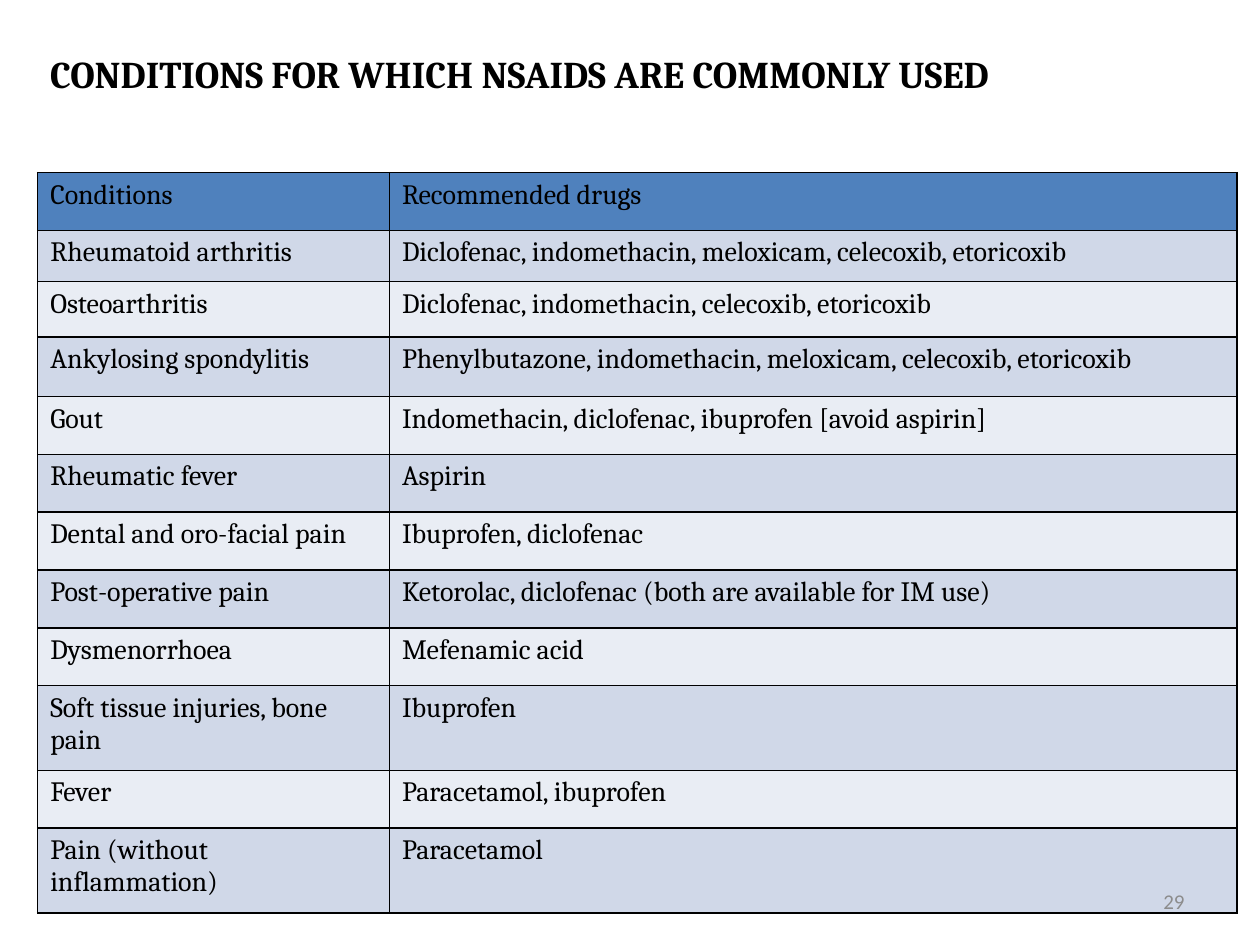
import pptx
import pptx.util
import pptx.dml.color
import pptx.enum.text
import pptx.oxml
import pptx.oxml.ns
from pptx.util import Cm, Pt
from pptx.dml.color import RGBColor

BLACK = RGBColor(0x00, 0x00, 0x00)
GREY = RGBColor(0x8C, 0x8C, 0x8C)
HEADER = RGBColor(0x4F, 0x81, 0xBD)
BANDS = (RGBColor(0xE9, 0xED, 0xF4), RGBColor(0xD0, 0xD8, 0xE8))

# Content
TITLE = "CONDITIONS FOR WHICH NSAIDS ARE COMMONLY USED"
PAGE = "29"
ROWS = [
    ("Conditions", "Recommended drugs"),
    ("Rheumatoid arthritis", "Diclofenac, indomethacin, meloxicam, celecoxib, etoricoxib"),
    ("Osteoarthritis", "Diclofenac, indomethacin, celecoxib, etoricoxib"),
    ("Ankylosing spondylitis", "Phenylbutazone, indomethacin, meloxicam, celecoxib, etoricoxib"),
    ("Gout", "Indomethacin, diclofenac, ibuprofen [avoid aspirin]"),
    ("Rheumatic fever", "Aspirin"),
    ("Dental and oro-facial pain", "Ibuprofen, diclofenac"),
    ("Post-operative pain", "Ketorolac, diclofenac (both are available for IM use)"),
    ("Dysmenorrhoea", "Mefenamic acid"),
    ("Soft tissue injuries, bone pain", "Ibuprofen"),
    ("Fever", "Paracetamol, ibuprofen"),
    ("Pain (without inflammation)", "Paracetamol"),
]
COL_WIDTHS = (7.09, 17.09)
ROW_HEIGHT = 1.165
SPECIAL_HEIGHTS = {1: 1.03, 2: 1.12, 3: 1.2, 9: 1.71, 11: 1.71}


def write(tf, text, size, font, color, bold=False, align=None):
    tf.text = text
    p = tf.paragraphs[0]
    p.alignment = align
    f = p.runs[0].font
    f.size, f.name, f.bold = Pt(size), font, bold
    f.color.rgb = color


def add_text(s, box, *style, **options):
    tf = s.shapes.add_textbox(*(Cm(v) for v in box)).text_frame
    tf.word_wrap = True
    tf.vertical_anchor = pptx.enum.text.MSO_ANCHOR.MIDDLE
    write(tf, *style, **options)


def add_borders(cell):
    # Borders must come before the fill in the cell properties
    for i, side in enumerate(("lnL", "lnR", "lnT", "lnB")):
        cell._tc.get_or_add_tcPr().insert(i, pptx.oxml.parse_xml(
            f'<a:{side} {pptx.oxml.ns.nsdecls("a")} w="{Pt(1)}"><a:solidFill>'
            f'<a:srgbClr val="{BLACK}"/></a:solidFill></a:{side}>'))


prs = pptx.Presentation()
prs.slide_width, prs.slide_height = Cm(25.4), Cm(19.05)
s = prs.slides.add_slide(prs.slide_layouts[6])

# Title
add_text(s, (0.76, 0.41, 24.08, 2.13), TITLE, 21.6, "Cambria", BLACK, bold=True)

# Table of conditions and drugs
heights = [SPECIAL_HEIGHTS.get(i, ROW_HEIGHT) for i in range(len(ROWS))]
table = s.shapes.add_table(len(ROWS), len(COL_WIDTHS), Cm(0.76), Cm(3.48),
                           Cm(sum(COL_WIDTHS)), Cm(sum(heights))).table
for col, width in zip(table.columns, COL_WIDTHS):
    col.width = Cm(width)
for i, (texts, height) in enumerate(zip(ROWS, heights)):
    table.rows[i].height = Cm(height)
    for j, text in enumerate(texts):
        cell = table.cell(i, j)
        write(cell.text_frame, text, 16, "Cambria", BLACK)
        cell.fill.solid()
        cell.fill.fore_color.rgb = BANDS[i % 2] if i else HEADER
        add_borders(cell)

# Page number
add_text(s, (18.21, 17.65, 5.92, 1.02), PAGE, 12, "Calibri", GREY,
         align=pptx.enum.text.PP_ALIGN.RIGHT)

prs.save("out.pptx")
